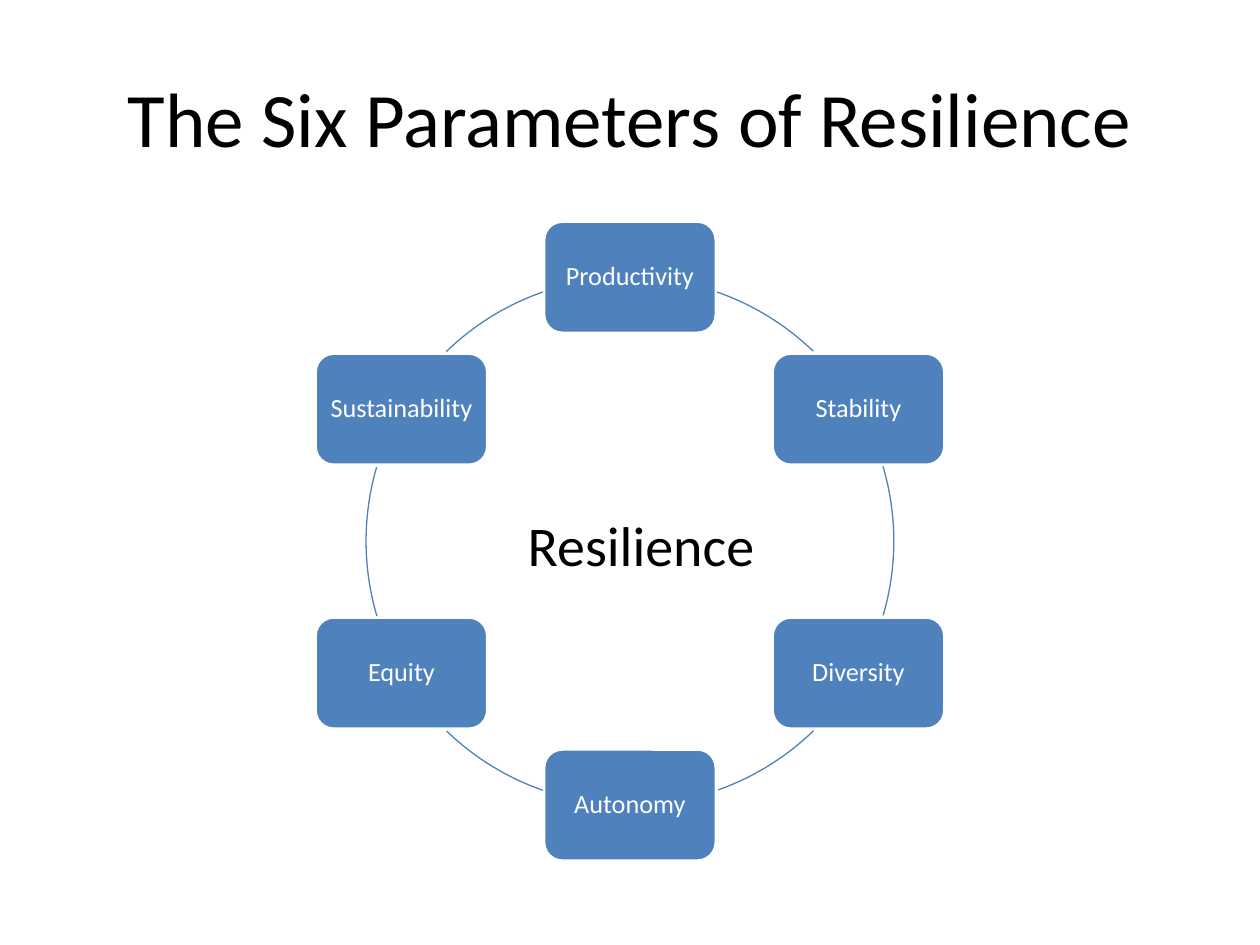
from math import cos, radians, sin

from pptx import Presentation
from pptx.dml.color import RGBColor
from pptx.enum.shapes import MSO_SHAPE as Shape
from pptx.enum.text import MSO_ANCHOR as Anchor, PP_ALIGN as Align
from pptx.util import Cm, Pt

BLUE = RGBColor(0x4F, 0x81, 0xBD)
WHITE = RGBColor(0xFF, 0xFF, 0xFF)
BLACK = RGBColor(0x00, 0x00, 0x00)
FONT = "Calibri"

PARAMETERS = ["Productivity", "Stability", "Diversity",
              "Autonomy", "Equity", "Sustainability"]
NODE_WIDTH, NODE_HEIGHT = 3.48, 2.26
# Visible arcs between nodes, in degrees clockwise from the top; repeats each half turn
HALF_TURN_ARCS = [(19.3, 44.1), (73.5, 106.5), (135.9, 160.7)]


def write_text(shape, text, size, color):
    """Put one centred line of text in the shape."""
    frame = shape.text_frame
    frame.text = text
    frame.vertical_anchor = Anchor.MIDDLE
    paragraph = frame.paragraphs[0]
    paragraph.alignment = Align.CENTER
    font = paragraph.runs[0].font
    font.name, font.size, font.color.rgb = FONT, Pt(size), color
    return frame


def add_label(slide, left, top, width, height, text, size, wrap):
    """Add a free-standing black text."""
    box = slide.shapes.add_textbox(Cm(left), Cm(top), Cm(width), Cm(height))
    write_text(box, text, size, BLACK).word_wrap = wrap


def add_node(slide, center_x, center_y, text):
    """Add a rounded box centred on the given point."""
    node = slide.shapes.add_shape(
        Shape.ROUNDED_RECTANGLE,
        Cm(center_x - NODE_WIDTH / 2), Cm(center_y - NODE_HEIGHT / 2),
        Cm(NODE_WIDTH), Cm(NODE_HEIGHT))
    node.shadow.inherit = False
    node.fill.solid()
    node.fill.fore_color.rgb = BLUE
    node.line.color.rgb = WHITE
    node.line.width = Pt(2)
    frame = write_text(node, text, 15, WHITE)
    frame.word_wrap = True
    frame.margin_left = frame.margin_right = Cm(0.15)
    frame.margin_top = frame.margin_bottom = Cm(0.15)
    frame.paragraphs[0].line_spacing = 0.9


def add_arc(slide, left, top, diameter, start, end):
    """Add a piece of the ring between two angles from the top."""
    arc = slide.shapes.add_shape(
        Shape.ARC, Cm(left), Cm(top), Cm(diameter), Cm(diameter))
    arc.shadow.inherit = False
    arc.fill.background()
    arc.line.color.rgb = BLUE
    arc.line.width = Pt(0.75)
    # Arc angles run from 3 o'clock; one degree is 0.6 adjustment units
    for index, angle in enumerate((start, end)):
        arc.adjustments[index] = (angle - 90) % 360 * 0.6


def add_cycle(slide, left, top, diameter):
    """Draw the ring of parameters in the given square."""
    radius = diameter / 2
    for index, name in enumerate(PARAMETERS):
        angle = radians(index * 360 / len(PARAMETERS))
        add_node(slide, left + radius * (1 + sin(angle)),
                 top + radius * (1 - cos(angle)), name)
        half_turn, position = divmod(index, len(HALF_TURN_ARCS))
        start, end = HALF_TURN_ARCS[position]
        add_arc(slide, left, top, diameter,
                start + 180 * half_turn, end + 180 * half_turn)
    # Centre caption
    add_label(slide, left + radius - 2.34, top + radius - 0.75, 5.13, 1.63,
              "Resilience", 32, False)


def main():
    presentation = Presentation()
    presentation.slide_width, presentation.slide_height = Cm(25.4), Cm(19.05)
    slide = presentation.slides.add_slide(presentation.slide_layouts[6])
    # Title
    add_label(slide, 1.27, 0.76, 22.86, 3.18,
              "The Six Parameters of Resilience", 44, True)
    # Cycle diagram
    add_cycle(slide, 7.38, 5.59, 10.64)
    presentation.save("out.pptx")


if __name__ == "__main__":
    main()
